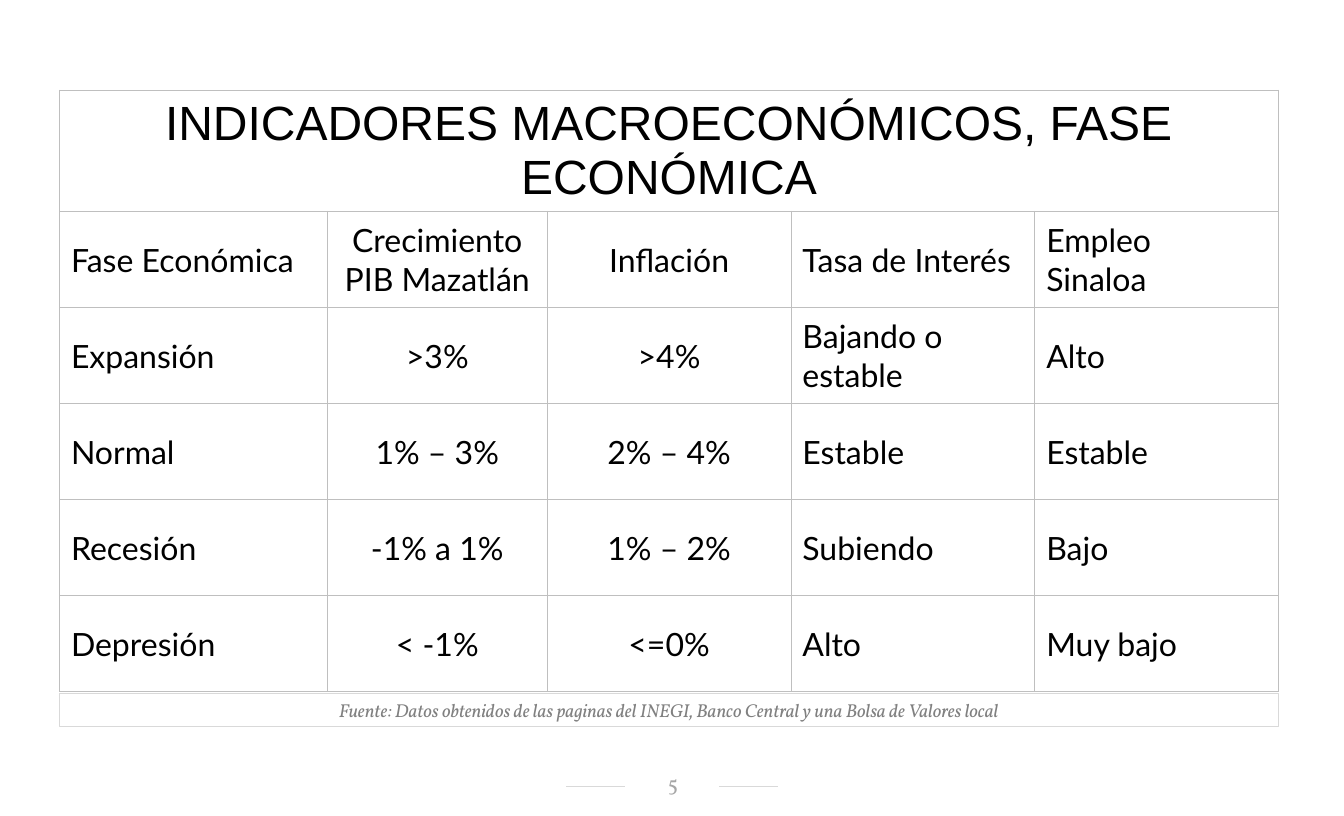
from dataclasses import dataclass

from lxml import etree
from pptx import Presentation, util as u
from pptx.dml.color import RGBColor
from pptx.enum import shapes, text
from pptx.oxml.ns import qn

WIDTH, HEIGHT = 14, 8.5
LEFT, TOP = 0.62, 0.94
COLUMNS = [2.79, 2.29] + [2.54] * 3
ROWS = [1.26] + [1] * 5
CENTERED_COLUMNS = (1, 2)

TITLE = "INDICADORES MACROECONÓMICOS, FASE ECONÓMICA"
INDICATORS = [
    ["Fase Económica", "Crecimiento PIB Mazatlán", "Inflación", "Tasa de Interés", "Empleo\nSinaloa"],
    ["Expansión", ">3%", ">4%", "Bajando o estable", "Alto"],
    ["Normal", "1% – 3%", "2% – 4%", "Estable", "Estable"],
    ["Recesión", "-1% a 1%", "1% – 2%", "Subiendo", "Bajo"],
    ["Depresión", "< -1%", "<=0%", "Alto", "Muy bajo"],
]
SOURCE = "Fuente: Datos obtenidos de las paginas del INEGI, Banco Central y una Bolsa de Valores local"


@dataclass(frozen=True)
class Style:
    font: str
    size: int
    color: str
    italic: bool = False


@dataclass(frozen=True)
class Theme:
    title: Style = Style("Arial", 36, "000000")
    body: Style = Style("Lato", 24, "000000")
    source: Style = Style("Vollkorn", 14, "808080", True)
    number: Style = Style("Vollkorn", 16, "A6A6A6")
    border: str = "BFBFBF"
    rule: str = "D9D9D9"


THEME = Theme()


def write(frame, content, style, centered=True):
    frame.text = content
    for paragraph in frame.paragraphs:
        paragraph.alignment = text.PP_ALIGN.CENTER if centered else text.PP_ALIGN.LEFT
        font = paragraph.font
        font.name, font.size, font.italic = style.font, u.Pt(style.size), style.italic
        font.color.rgb = RGBColor.from_string(style.color)


def set_margins(target, left, top, right, bottom):
    target.margin_left, target.margin_top = u.Inches(left), u.Inches(top)
    target.margin_right, target.margin_bottom = u.Inches(right), u.Inches(bottom)


def add_borders(cell):
    """Draw all four edges; they must precede the fill in the cell's XML."""
    properties = cell._tc.get_or_add_tcPr()
    for index, side in enumerate(("lnL", "lnR", "lnT", "lnB")):
        line = etree.Element(qn(f"a:{side}"), w=str(u.Pt(0.5)))
        fill = etree.SubElement(line, qn("a:solidFill"))
        etree.SubElement(fill, qn("a:srgbClr"), val=THEME.border)
        properties.insert(index, line)


def fill_cell(cell, content, style, centered, vertical_margins):
    write(cell.text_frame, content, style, centered)
    cell.vertical_anchor = text.MSO_ANCHOR.MIDDLE
    top, bottom = vertical_margins
    set_margins(cell, 0.12, top, 0.12, bottom)


def add_indicator_table(slide):
    table = slide.shapes.add_table(
        len(ROWS), len(COLUMNS), u.Inches(LEFT), u.Inches(TOP),
        u.Inches(sum(COLUMNS)), u.Inches(sum(ROWS))).table
    table.first_row = table.horz_banding = False
    for column, width in zip(table.columns, COLUMNS):
        column.width = u.Inches(width)
    for row, height in zip(table.rows, ROWS):
        row.height = u.Inches(height)
        for cell in row.cells:
            cell.fill.background()
            add_borders(cell)
    table.cell(0, 0).merge(table.cell(0, len(COLUMNS) - 1))
    fill_cell(table.cell(0, 0), TITLE, THEME.title, True, (0.03, 0.03))
    for row, values in enumerate(INDICATORS, start=1):
        for column, value in enumerate(values):
            fill_cell(table.cell(row, column), value, THEME.body,
                      column in CENTERED_COLUMNS, (0.01, 0))


def add_source_box(slide):
    box = slide.shapes.add_shape(
        shapes.MSO_SHAPE.RECTANGLE, u.Inches(LEFT), u.Inches(TOP + sum(ROWS) + 0.02),
        u.Inches(sum(COLUMNS)), u.Inches(0.35))
    box.shadow.inherit = False
    box.fill.background()
    box.line.color.rgb = RGBColor.from_string(THEME.rule)
    box.line.width = u.Pt(0.75)
    box.text_frame.word_wrap = True
    write(box.text_frame, SOURCE, THEME.source)


def add_rule(slide, left, top, width):
    rule = slide.shapes.add_connector(
        shapes.MSO_CONNECTOR.STRAIGHT, u.Inches(left), u.Inches(top),
        u.Inches(left + width), u.Inches(top))
    rule.line.color.rgb = RGBColor.from_string(THEME.rule)
    rule.line.width = u.Pt(0.5)
    etree.SubElement(rule._element.spPr, qn("a:effectLst"))


def add_page_number(slide, number):
    """Place the number between two short rules."""
    left, width, rule_width, middle = 6.51, 0.98, 0.61, 8.19
    for rule_left in (left - rule_width, left + width):
        add_rule(slide, rule_left, middle, rule_width)
    box = slide.shapes.add_textbox(
        u.Inches(left), u.Inches(8.04), u.Inches(width), u.Inches(0.26))
    frame = box.text_frame
    frame.word_wrap = True
    frame.vertical_anchor = text.MSO_ANCHOR.MIDDLE
    set_margins(frame, 0.12, 0.02, 0.1, 0.05)
    write(frame, str(number), THEME.number)


def main():
    presentation = Presentation()
    presentation.slide_width, presentation.slide_height = u.Inches(WIDTH), u.Inches(HEIGHT)
    slide = presentation.slides.add_slide(presentation.slide_layouts[6])
    add_page_number(slide, 5)
    add_source_box(slide)
    add_indicator_table(slide)
    presentation.save("out.pptx")


if __name__ == "__main__":
    main()
